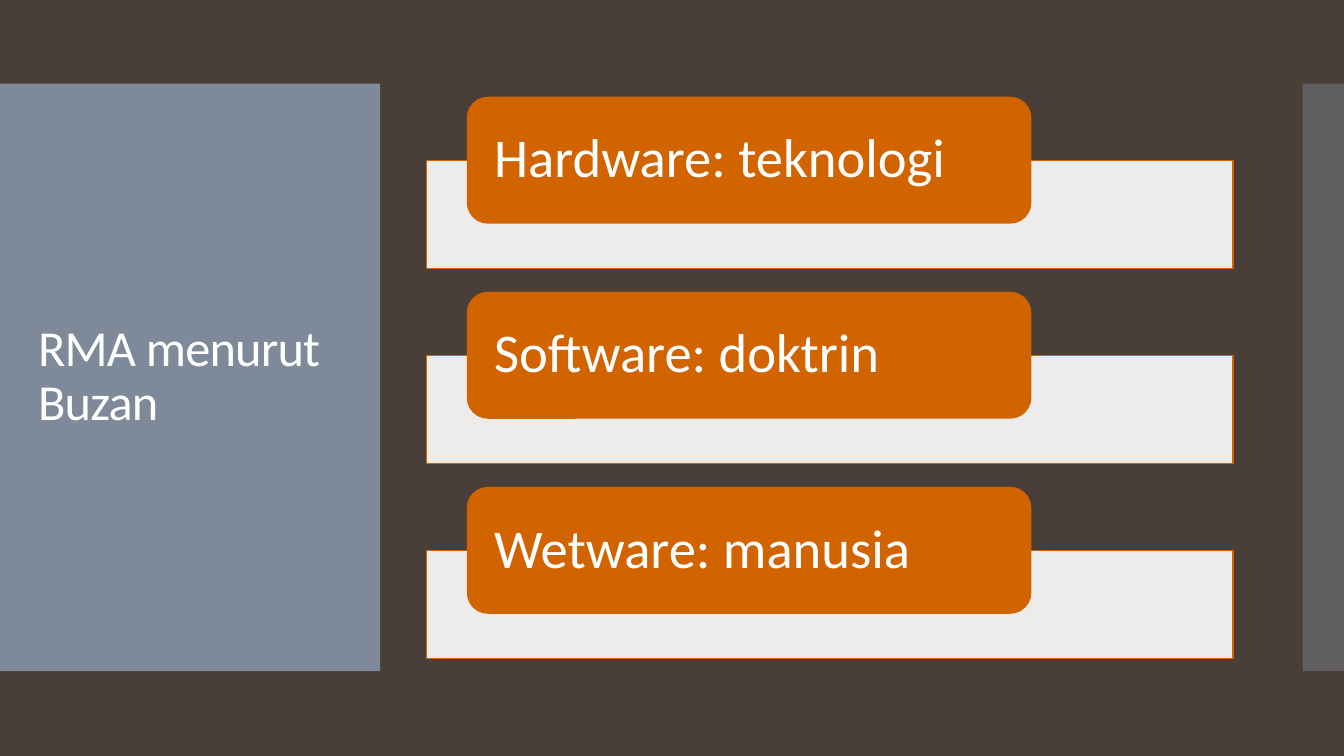
from dataclasses import dataclass

from lxml.etree import SubElement
from pptx import Presentation
from pptx.dml.color import RGBColor
from pptx.enum.shapes import MSO_SHAPE as Preset
from pptx.enum.text import MSO_ANCHOR as Anchor, PP_ALIGN as Align
from pptx.oxml.ns import qn
from pptx.util import Inches, Pt


@dataclass(frozen=True)
class Theme:
    """Colours, font and type sizes of the slide."""
    background: str = "4A3F38"
    panel: str = "818E9F"
    accent: str = "D26400"
    white: str = "FFFFFF"
    font: str = "Calibri"
    title_size: int = 36
    label_size: int = 39


THEME = Theme()
TITLE = "RMA menurut Buzan"
COMPONENTS = ["Hardware: teknologi", "Software: doktrin", "Wetware: manusia"]
FIRST_TOP, LAST_TOP = 0.96, 4.83
BAR_DROP = 0.63


def paint(fill, colour, opacity=100):
    """Apply a solid colour with an opacity in percent."""
    fill.solid()
    fill.fore_color.rgb = RGBColor.from_string(colour)
    if opacity < 100:
        srgb = fill._xPr.find(".//" + qn("a:srgbClr"))
        SubElement(srgb, qn("a:alpha"), val=str(opacity * 1000))


def add_block(slide, preset, box, colour, opacity=100, outline=None):
    """Add a flat preset shape, optionally outlined."""
    block = slide.shapes.add_shape(preset, *map(Inches, box))
    block.shadow.inherit = False
    paint(block.fill, colour, opacity)
    if outline:
        paint(block.line.fill, outline)
        block.line.width = Pt(0.75)
    else:
        block.line.fill.background()
    return block


def write(holder, wording, size, side_inset, spacing=0):
    """Write one left-aligned, vertically centred paragraph."""
    frame = holder.text_frame
    frame_format = {
        "word_wrap": True,
        "vertical_anchor": Anchor.MIDDLE,
        "margin_left": Inches(side_inset),
        "margin_right": Inches(side_inset),
        "margin_top": 0,
        "margin_bottom": 0,
    }
    for attribute, value in frame_format.items():
        setattr(frame, attribute, value)
    paragraph = frame.paragraphs[0]
    paragraph.alignment = Align.LEFT
    paragraph.line_spacing = 0.9
    run = paragraph.add_run()
    run.text = wording
    run.font.name = THEME.font
    run.font.size = Pt(size)
    run.font.color.rgb = RGBColor.from_string(THEME.white)
    if spacing:
        run._r.get_or_add_rPr().set("spc", str(round(spacing * 100)))


def add_title(slide):
    """Add the side panels and the title."""
    add_block(slide, Preset.RECTANGLE, (0, 0.83, 3.77, 5.83), THEME.panel, 95)
    add_block(slide, Preset.RECTANGLE, (12.92, 0.83, 0.41, 5.83), THEME.panel, 40)
    title = slide.shapes.add_textbox(*map(Inches, (0.28, 1.23, 3.22, 5.03)))
    write(title, TITLE, THEME.title_size, 0.1, spacing=-0.6)


def add_component(slide, top, wording):
    """Add a pale bar with its rounded label in front."""
    add_block(slide, Preset.RECTANGLE, (4.23, top + BAR_DROP, 8, 1.07),
              THEME.white, 90, THEME.accent)
    label = add_block(slide, Preset.ROUNDED_RECTANGLE, (4.63, top, 5.6, 1.26), THEME.accent)
    write(label, wording, THEME.label_size, 0.21)


def main():
    """Build and save the slide."""
    deck = Presentation()
    deck.slide_width, deck.slide_height = Inches(13.33), Inches(7.5)
    slide = deck.slides.add_slide(deck.slide_layouts[6])
    paint(slide.background.fill, THEME.background)
    add_title(slide)
    pitch = (LAST_TOP - FIRST_TOP) / (len(COMPONENTS) - 1)
    for row, wording in enumerate(COMPONENTS):
        add_component(slide, FIRST_TOP + row * pitch, wording)
    deck.save("out.pptx")


if __name__ == "__main__":
    main()
